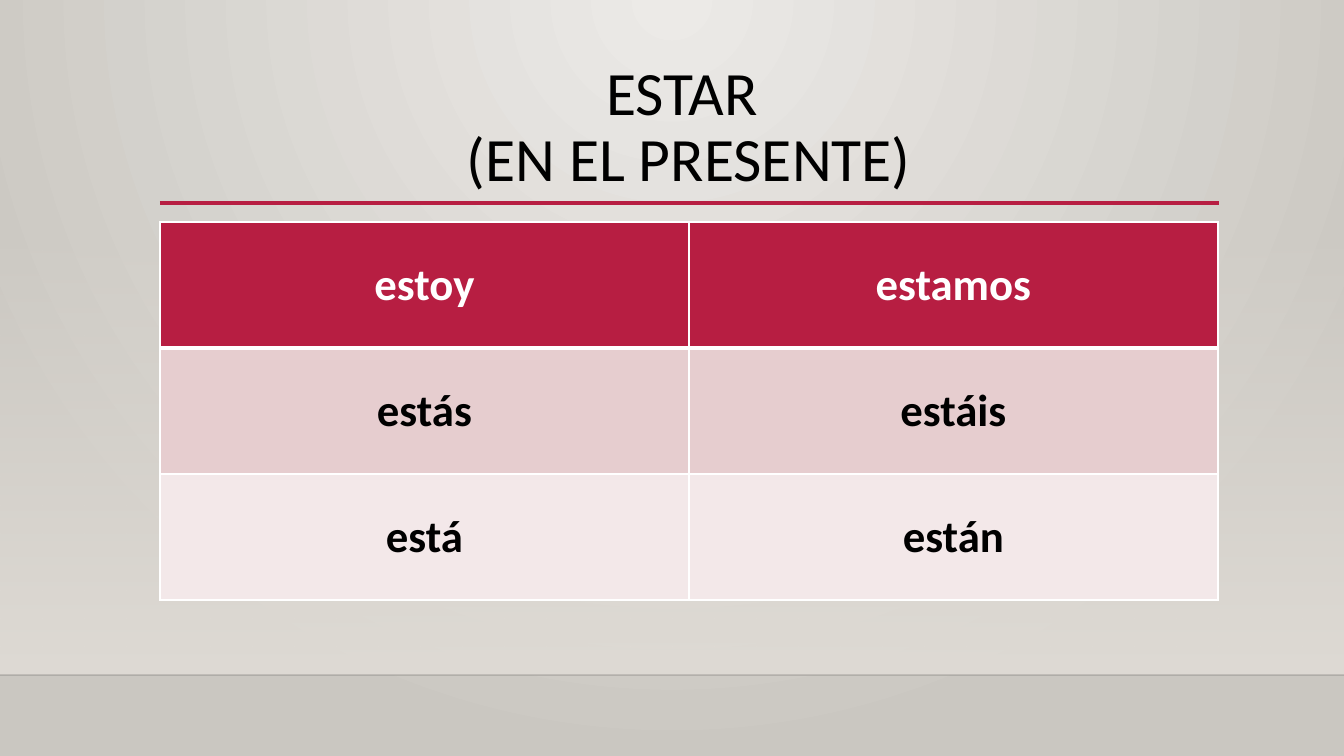
from lxml import etree
from pptx import Presentation
from pptx import util as u
from pptx.dml.color import RGBColor
from pptx.enum import shapes, text
from pptx.oxml import ns

PX = 914400 / 100.8
WIDTH, HEIGHT = 1344, 756
LEFT, CONTENT_WIDTH = 160, 1058
FLOOR_TOP = 675
CRIMSON, WHITE, BLACK = "B71E42", "FFFFFF", "000000"


def px(*lengths):
    """Turn pixel lengths into EMU."""
    return [u.Emu(round(length * PX)) for length in lengths]


def set_gradient(fill_parent, stops, direction):
    """Replace a solid fill by a gradient of (position, colour, opacity) stops in percent."""
    stop_xml = "".join(
        f'<a:gs pos="{position * 1000}"><a:srgbClr val="{color}">'
        f'<a:alpha val="{opacity * 1000}"/></a:srgbClr></a:gs>'
        for position, color, opacity in stops)
    gradient = etree.fromstring(
        f'<a:gradFill {ns.nsdecls("a")} rotWithShape="1">'
        f'<a:gsLst>{stop_xml}</a:gsLst>{direction}</a:gradFill>')
    fill_parent.replace(fill_parent.find(ns.qn("a:solidFill")), gradient)


presentation = Presentation()
presentation.slide_width, presentation.slide_height = px(WIDTH, HEIGHT)
slide = presentation.slides.add_slide(presentation.slide_layouts[6])

# Background and wall
slide.background.fill.solid()
set_gradient(
    slide.element.find(".//" + ns.qn("p:bgPr")),
    [(0, "ECEAE7", 100), (100, "CAC7C1", 100)],
    '<a:path path="circle"><a:fillToRect l="43000" t="0" r="43000" b="100000"/></a:path>')

wall = slide.shapes.add_shape(shapes.MSO_SHAPE.RECTANGLE, *px(0, 223, WIDTH, FLOOR_TOP - 223))
wall.shadow.inherit = False
wall.line.fill.background()
wall.fill.solid()
set_gradient(wall.element.spPr, [(0, "DFDBD5", 0), (100, "DFDBD5", 100)],
             '<a:lin ang="5400000" scaled="0"/>')

# Floor edge and title rule
for start, end, y, color, width, opacity in [
        (0, WIDTH, FLOOR_TOP, BLACK, 1, 20),
        (LEFT, LEFT + CONTENT_WIDTH + 1, 203, CRIMSON, 2.5, 100)]:
    rule = slide.shapes.add_connector(shapes.MSO_CONNECTOR.STRAIGHT, *px(start, y, end, y))
    rule.line.color.rgb = RGBColor.from_string(color)
    rule.line.width = u.Pt(width)
    line_color = rule.element.spPr.find(".//" + ns.qn("a:srgbClr"))
    etree.SubElement(line_color, ns.qn("a:alpha"), val=str(opacity * 1000))
    etree.SubElement(rule.element.spPr, ns.qn("a:effectLst"))

# Title
title = slide.shapes.add_textbox(*px(LEFT, 53, CONTENT_WIDTH, 151))
title.text_frame.word_wrap = True
title.text_frame.vertical_anchor = text.MSO_ANCHOR.MIDDLE
paragraph = title.text_frame.paragraphs[0]
paragraph.text = "ESTAR \v(EN EL PRESENTE)"
paragraph.alignment = text.PP_ALIGN.CENTER
paragraph.line_spacing = 0.9
for run in paragraph.runs:
    run.font.name = "Calibri"
    run.font.size = u.Pt(44)
    run.font.color.rgb = RGBColor.from_string(BLACK)

# Conjugation table
conjugation = [("estoy", "estamos"), ("estás", "estáis"), ("está", "están")]
row_colors = [(CRIMSON, WHITE), ("E6CDCF", BLACK), ("F3E8E9", BLACK)]
row_height = 126
table = slide.shapes.add_table(
    3, 2, *px(LEFT, 222, CONTENT_WIDTH, row_height * len(conjugation))).table

for row, (forms, (fill_color, text_color)) in enumerate(zip(conjugation, row_colors)):
    table.rows[row].height = px(row_height)[0]
    for column, form in enumerate(forms):
        cell = table.cell(row, column)
        cell.vertical_anchor = text.MSO_ANCHOR.MIDDLE
        properties = cell._tc.get_or_add_tcPr()
        for side in "LRTB":
            heavy = (row, side) in [(0, "B"), (1, "T")]
            properties.append(etree.fromstring(
                f'<a:ln{side} {ns.nsdecls("a")} w="{u.Pt(3 if heavy else 1)}"><a:solidFill>'
                f'<a:srgbClr val="{WHITE}"/></a:solidFill></a:ln{side}>'))
        cell.fill.solid()
        cell.fill.fore_color.rgb = RGBColor.from_string(fill_color)
        paragraph = cell.text_frame.paragraphs[0]
        paragraph.text = form
        paragraph.alignment = text.PP_ALIGN.CENTER
        font = paragraph.runs[0].font
        font.name, font.size, font.bold = "Calibri", u.Pt(32), True
        font.color.rgb = RGBColor.from_string(text_color)

presentation.save("out.pptx")
